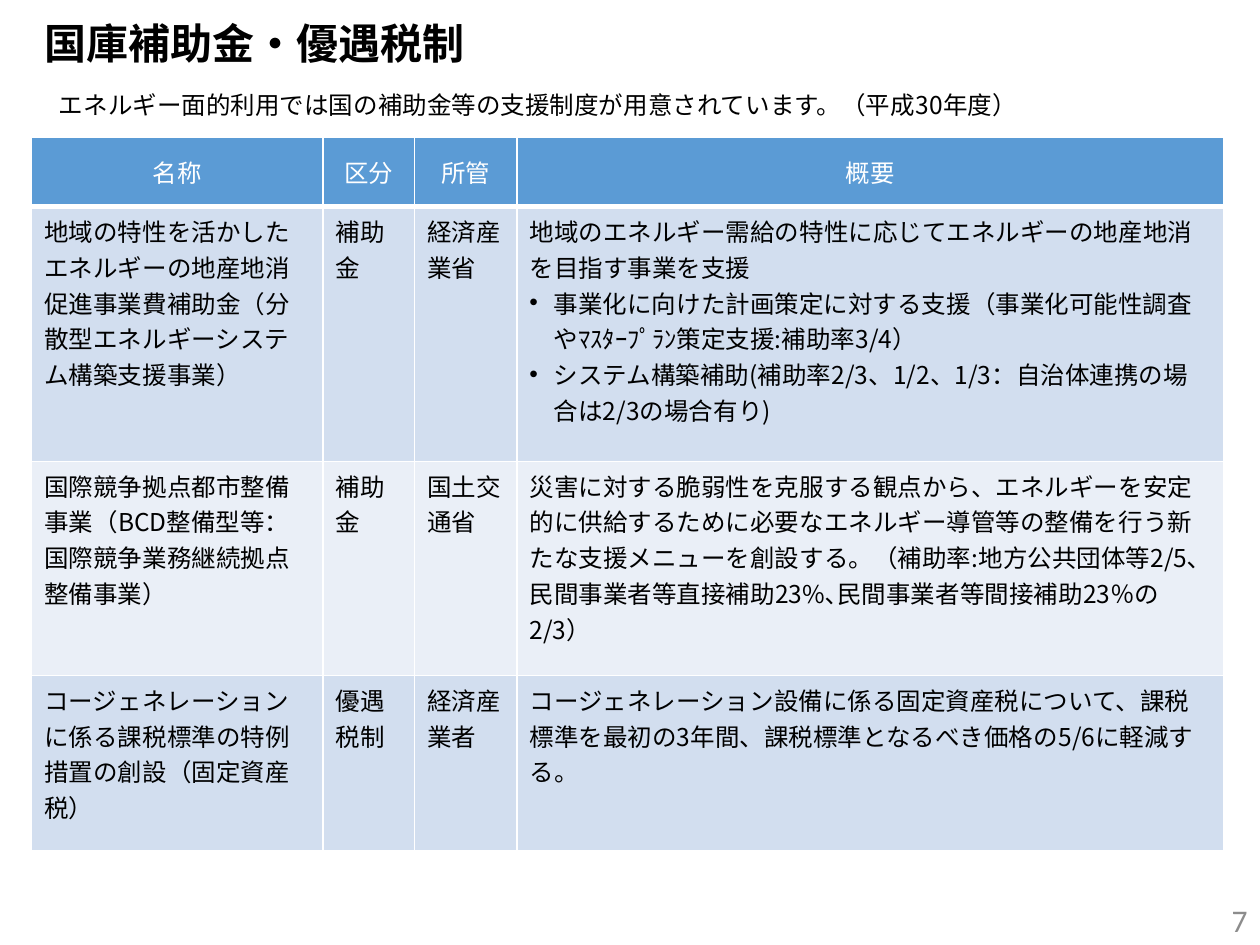
from lxml import etree
from pptx import Presentation
from pptx.dml.color import RGBColor
from pptx.enum.text import MSO_ANCHOR, PP_ALIGN
from pptx.oxml.ns import qn
from pptx.util import Cm, Pt

TOP, MIDDLE = MSO_ANCHOR.TOP, MSO_ANCHOR.MIDDLE
LEFT, CENTER, RIGHT = PP_ALIGN.LEFT, PP_ALIGN.CENTER, PP_ALIGN.RIGHT

WHITE = RGBColor(0xFF, 0xFF, 0xFF)
BLACK = RGBColor(0x00, 0x00, 0x00)
GRAY = RGBColor(0x8C, 0x8C, 0x8C)
HEADER_BLUE = RGBColor(0x5B, 0x9B, 0xD5)
BAND_DARK = RGBColor(0xD2, 0xDE, 0xEF)
BAND_LIGHT = RGBColor(0xEA, 0xEF, 0xF7)

JAPANESE_FONT = "Noto Sans CJK JP"
NUMBER_FONT = "Calibri"
BULLET = "• "
BULLET_INDENT = Cm(0.49)

COLUMN_WIDTHS = [5.87, 1.85, 2.06, 14.25]
ROW_HEIGHTS = [1.4, 5.13, 4.32, 3.53]
HEADERS = ["名称", "区分", "所管", "概要"]
PROGRAMS = [
    [
        "地域の特性を活かしたエネルギーの地産地消促進事業費補助金（分散型エネルギーシステム構築支援事業）",
        "補助金",
        "経済産業省",
        "地域のエネルギー需給の特性に応じてエネルギーの地産地消を目指す事業を支援\n"
        "• 事業化に向けた計画策定に対する支援（事業化可能性調査やﾏｽﾀｰﾌﾟﾗﾝ策定支援:補助率3/4）\n"
        "• システム構築補助(補助率2/3、1/2、1/3：自治体連携の場合は2/3の場合有り)",
    ],
    [
        "国際競争拠点都市整備事業（BCD整備型等：国際競争業務継続拠点整備事業）",
        "補助金",
        "国土交通省",
        "災害に対する脆弱性を克服する観点から、エネルギーを安定的に供給するために必要な"
        "エネルギー導管等の整備を行う新たな支援メニューを創設する。（補助率:地方公共団体等2/5"
        "､民間事業者等直接補助23%､民間事業者等間接補助23％の2/3）",
    ],
    [
        "コージェネレーションに係る課税標準の特例措置の創設（固定資産税）",
        "優遇税制",
        "経済産業者",
        "コージェネレーション設備に係る固定資産税について、課税標準を最初の3年間、"
        "課税標準となるべき価格の5/6に軽減する。",
    ],
]


def add_bullet(paragraph):
    properties = paragraph._p.get_or_add_pPr()
    properties.set("marL", str(BULLET_INDENT))
    properties.set("indent", str(-BULLET_INDENT))
    etree.SubElement(properties, qn("a:buFont"), typeface="Arial")
    etree.SubElement(properties, qn("a:buChar"), char=BULLET.strip())


def write_text(text_frame, text, size=14, color=BLACK, font=JAPANESE_FONT,
               bold=False, align=LEFT, line_spacing=None):
    text_frame.word_wrap = True
    for index, line in enumerate(text.split("\n")):
        paragraph = text_frame.add_paragraph() if index else text_frame.paragraphs[0]
        paragraph.alignment = align
        if line_spacing:
            paragraph.line_spacing = line_spacing
        if line.startswith(BULLET):
            add_bullet(paragraph)
        run = paragraph.add_run()
        run.text = line.removeprefix(BULLET)
        run.font.size = Pt(size)
        run.font.bold = bold
        run.font.color.rgb = color
        run.font.name = font
        etree.SubElement(run._r.get_or_add_rPr(), qn("a:ea"), typeface=font)


def set_borders(cell, color, bottom_width):
    properties = cell._tc.get_or_add_tcPr()
    for side in "LRTB":
        width = bottom_width if side == "B" else 1
        line = etree.SubElement(properties, qn(f"a:ln{side}"), w=str(Pt(width)))
        fill = etree.SubElement(line, qn("a:solidFill"))
        etree.SubElement(fill, qn("a:srgbClr"), val=str(color))


class SlideBuilder:
    def __init__(self, slide):
        self.slide = slide

    def text(self, text, left, top, width, height, anchor=TOP, **text_format):
        shape = self.slide.shapes.add_textbox(Cm(left), Cm(top), Cm(width), Cm(height))
        shape.text_frame.vertical_anchor = anchor
        write_text(shape.text_frame, text, **text_format)

    def table(self, rows, left, top):
        shape = self.slide.shapes.add_table(
            len(rows), len(COLUMN_WIDTHS), Cm(left), Cm(top),
            Cm(sum(COLUMN_WIDTHS)), Cm(sum(ROW_HEIGHTS)))
        table = shape.table
        for column, width in zip(table.columns, COLUMN_WIDTHS):
            column.width = Cm(width)
        for row, height in zip(table.rows, ROW_HEIGHTS):
            row.height = Cm(height)
        for row_index, row in enumerate(rows):
            for column_index, text in enumerate(row):
                self.cell(table.cell(row_index, column_index), text, row_index)

    def cell(self, cell, text, row_index):
        is_header = row_index == 0
        band = BAND_DARK if row_index % 2 else BAND_LIGHT
        set_borders(cell, WHITE, 3 if is_header else 1)
        cell.fill.solid()
        cell.fill.fore_color.rgb = HEADER_BLUE if is_header else band
        cell.vertical_anchor = MIDDLE if is_header else TOP
        write_text(cell.text_frame, text, color=WHITE if is_header else BLACK,
                   align=CENTER if is_header else LEFT)


def main():
    presentation = Presentation()
    presentation.slide_width = Cm(25.4)
    presentation.slide_height = Cm(19.05)
    builder = SlideBuilder(presentation.slides.add_slide(presentation.slide_layouts[6]))
    builder.text("国庫補助金・優遇税制", 0.64, 0.2, 10, 1.45, anchor=MIDDLE,
                 size=24, bold=True, line_spacing=0.9)
    builder.table([HEADERS, *PROGRAMS], 0.64, 2.77)
    builder.text("7", 19.69, 18.03, 5.71, 1.02, anchor=MIDDLE,
                 size=18, color=GRAY, font=NUMBER_FONT, align=RIGHT)
    builder.text("エネルギー面的利用では国の補助金等の支援制度が用意されています。（平成30年度）",
                 0.94, 1.7, 23.7, 0.86)
    presentation.save("out.pptx")


if __name__ == "__main__":
    main()
